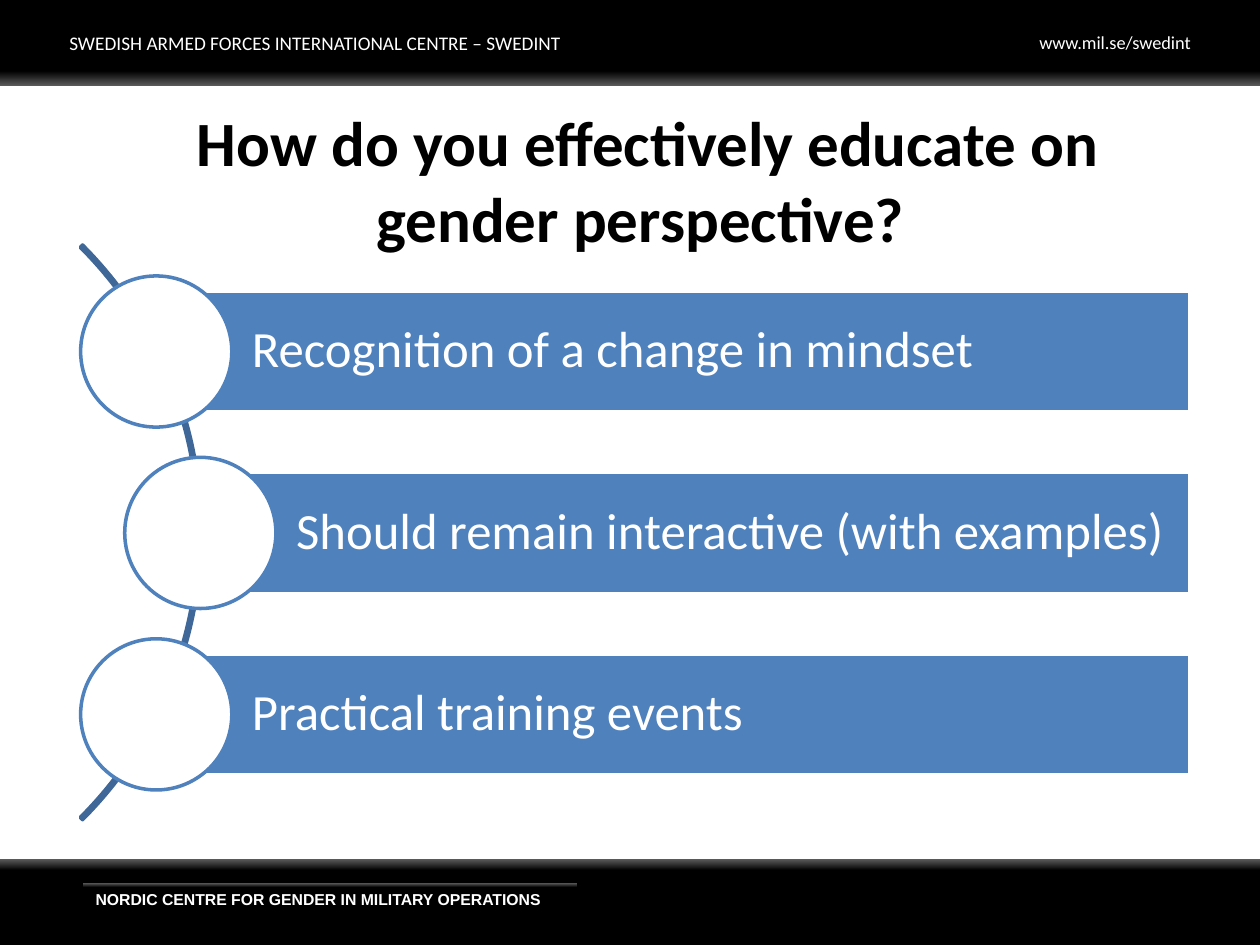
from pptx import Presentation
from pptx import util as u
from pptx.dml.color import RGBColor
from pptx.enum import shapes, text

PX = 9144  # EMU per px, 100 px to the inch
BLACK = RGBColor(0x00, 0x00, 0x00)
WHITE = RGBColor(0xFF, 0xFF, 0xFF)
GREY = RGBColor(0x59, 0x59, 0x59)
BLUE = RGBColor(0x4F, 0x81, 0xBD)
DARK_BLUE = RGBColor(0x3F, 0x67, 0x97)

presentation = Presentation()
presentation.slide_width, presentation.slide_height = 1000 * PX, 750 * PX
slide = presentation.slides.add_slide(presentation.slide_layouts[5])


def add_shape(kind, left, top, width, height, fill=None, line=None):
    """Add a shape; fill is a colour, a list of gradient stops or None."""
    shape = slide.shapes.add_shape(kind, left * PX, top * PX, width * PX, height * PX)
    shape.shadow.inherit = False
    if fill is None:
        shape.fill.background()
    elif isinstance(fill, list):
        shape.fill.gradient()
        shape.fill.gradient_angle = 270
        for stop, (position, color) in zip(shape.fill.gradient_stops, fill):
            stop.position = position
            stop.color.rgb = color
    else:
        shape.fill.solid()
        shape.fill.fore_color.rgb = fill
    if line is None:
        shape.line.fill.background()
    else:
        shape.line.color.rgb = line
        shape.line.width = u.Pt(2)
    return shape


def write(shape, words, size, color=WHITE, font="Calibri", bold=False,
          align=text.PP_ALIGN.LEFT, anchor=text.MSO_ANCHOR.MIDDLE,
          insets=(10, 5, 10, 5), line_spacing=None):
    frame = shape.text_frame
    frame.word_wrap = True
    frame.auto_size = text.MSO_AUTO_SIZE.NONE
    frame.vertical_anchor = anchor
    (frame.margin_left, frame.margin_top,
     frame.margin_right, frame.margin_bottom) = [inset * PX for inset in insets]
    paragraph = frame.paragraphs[0]
    paragraph.alignment = align
    paragraph.line_spacing = line_spacing
    run = paragraph.add_run()
    run.text = words
    run.font.size = u.Pt(size)
    run.font.name = font
    run.font.bold = bold
    run.font.color.rgb = color


RECTANGLE = shapes.MSO_SHAPE.RECTANGLE
HEADER_FADE = [(0.83, BLACK), (1, GREY)]
FOOTER_FADE = [(0, GREY), (0.13, BLACK)]

# Header band
add_shape(RECTANGLE, -4, 0, 1004, 68, HEADER_FADE)
centre_name = add_shape(RECTANGLE, 51, 17, 480, 34, BLACK, BLACK)
write(centre_name, "SWEDISH ARMED FORCES INTERNATIONAL CENTRE – SWEDINT", 11,
      insets=(4, 4, 4, 4))
web_address = slide.shapes.add_textbox(815 * PX, 20 * PX, 157 * PX, 29 * PX)
write(web_address, "www.mil.se/swedint", 10.5, anchor=text.MSO_ANCHOR.TOP)

# Footer band
add_shape(RECTANGLE, 0, 682, 1000, 68, FOOTER_FADE)
unit_name = add_shape(RECTANGLE, 66, 701, 392, 25, FOOTER_FADE)
write(unit_name, "NORDIC CENTRE FOR GENDER IN MILITARY OPERATIONS", 9,
      font="Arial", bold=True, anchor=text.MSO_ANCHOR.TOP)

# Arc behind the list
arc = add_shape(shapes.MSO_SHAPE.BLOCK_ARC, -485, 100, 645, 645, line=DARK_BLUE)
for index, value in enumerate((189, 27, 0.004)):
    arc.adjustments[index] = value

# List: each bar starts at the centre of its circle
BAR_RIGHT, BAR_HEIGHT, CIRCLE, PITCH = 944, 96, 120, 144
items = [
    (124, "Recognition of a change in mindset"),
    (159, "Should remain interactive (with examples)"),
    (124, "Practical training events"),
]
for index, (left, words) in enumerate(items):
    middle = 279 + index * PITCH
    bar = add_shape(RECTANGLE, left, middle - BAR_HEIGHT // 2,
                    BAR_RIGHT - left, BAR_HEIGHT, BLUE, WHITE)
    write(bar, words, 29, insets=(76, 8, 8, 8), line_spacing=0.9)
    add_shape(shapes.MSO_SHAPE.OVAL, left - CIRCLE // 2, middle - CIRCLE // 2,
              CIRCLE, CIRCLE, WHITE, BLUE)

# Title
title = slide.shapes.title
title.left, title.top, title.width, title.height = [
    length * PX for length in (137, 75, 754, 135)]
write(title, "How do you effectively educate on gender perspective? ", 36,
      color=BLACK, bold=True, align=text.PP_ALIGN.CENTER)

presentation.save("out.pptx")
